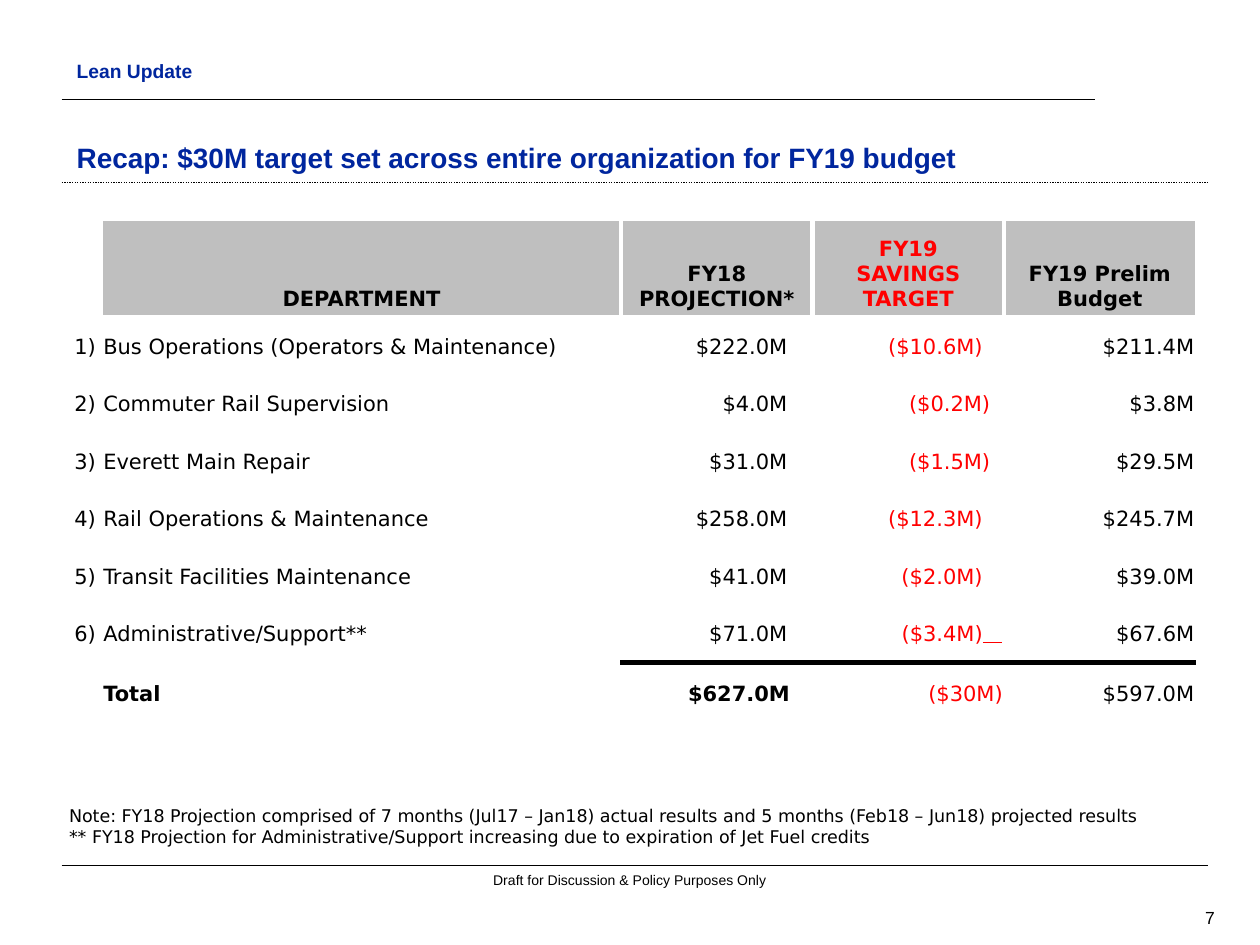
from lxml.etree import SubElement
from pptx import Presentation
from pptx.dml.color import RGBColor
from pptx.enum.dml import MSO_LINE
from pptx.enum.shapes import MSO_CONNECTOR
from pptx.enum.text import MSO_ANCHOR as ANCHOR, PP_ALIGN as ALIGN
from pptx.oxml import parse_xml
from pptx.oxml.ns import nsdecls, qn
from pptx.util import Inches, Pt

BLACK = RGBColor(0x00, 0x00, 0x00)
WHITE = RGBColor(0xFF, 0xFF, 0xFF)
BLUE = RGBColor(0x00, 0x26, 0x9E)
RED = RGBColor(0xFF, 0x00, 0x00)
GRAY = RGBColor(0xBF, 0xBF, 0xBF)

HEADERS = ["", "DEPARTMENT", "FY18 PROJECTION*", "FY19\nSAVINGS TARGET", "FY19 Prelim Budget"]
ROWS = [
    ["1)", "Bus Operations (Operators & Maintenance)", "$222.0M", "($10.6M)", "$211.4M"],
    ["2)", "Commuter Rail Supervision", "$4.0M", "($0.2M)", "$3.8M"],
    ["3)", "Everett Main Repair", "$31.0M", "($1.5M)", "$29.5M"],
    ["4)", "Rail Operations & Maintenance", "$258.0M", "($12.3M)", "$245.7M"],
    ["5)", "Transit Facilities Maintenance", "$41.0M", "($2.0M)", "$39.0M"],
    ["6)", "Administrative/Support**", "$71.0M", "($3.4M)", "$67.6M"],
    ["", "Total", "$627.0M", "($30M)", "$597.0M"],
]
SAVINGS_INSETS = [0.17, 0.11, 0.11, 0.17, 0.17, 0.01, 0.01]
COL_WIDTHS = [0.23, 4.12, 1.52, 1.52, 1.52]
TABLE_HEIGHT, HEADER_HEIGHT, TOTAL_HEIGHT = 4, 0.77, 0.49
FIRST_AMOUNT, SAVINGS = 2, 3
SUPPORT, TOTAL = len(ROWS) - 1, len(ROWS)


class SlideBuilder:
    heading = {"name": "Arial", "bold": True}
    footer = {"name": "Arial", "bold": False}
    body = {"name": "DejaVu Sans", "bold": False}

    def __init__(self, slide):
        self.s = slide

    def lines(self, tf, text, style, size, color=BLACK, align=ALIGN.LEFT):
        for i, line in enumerate(text.split("\n")):
            p = tf.paragraphs[0] if i == 0 else tf.add_paragraph()
            p.alignment = align
            self.run(p, line, style, size, color)

    def run(self, p, text, style, size, color):
        r = p.add_run()
        r.text = text
        for name, value in {**style, "size": Pt(size)}.items():
            setattr(r.font, name, value)
        r.font.color.rgb = color

    def text(self, box, text, style, size, color=BLACK, align=ALIGN.LEFT, anchor=ANCHOR.TOP):
        tf = self.s.shapes.add_textbox(*map(Inches, box)).text_frame
        tf.word_wrap = True
        tf.vertical_anchor = anchor
        self.lines(tf, text, style, size, color, align)

    def rule(self, y, right, width=0.75, dash=None):
        sp = self.s.shapes.add_connector(
            MSO_CONNECTOR.STRAIGHT, Inches(0.49), Inches(y), Inches(right), Inches(y))
        sp.line.color.rgb = BLACK
        sp.line.width = Pt(width)
        if dash:
            sp.line.dash_style = dash
        SubElement(sp._element.spPr, qn("a:effectLst"))

    def borders(self, cell, edges):
        tc_pr = cell._tc.get_or_add_tcPr()
        for i, (side, (color, width)) in enumerate(edges.items()):
            tc_pr.insert(i, parse_xml(
                f'<a:ln{side} {nsdecls("a")} w="{Pt(width)}"><a:solidFill>'
                f'<a:srgbClr val="{color}"/></a:solidFill></a:ln{side}>'))

    def edges(self, row, col):
        def across(edge):
            if edge == TOTAL and col >= FIRST_AMOUNT:
                return BLACK, 3
            return WHITE, 3 if edge == 1 and col else 1

        def down(edge):
            thick = edge > FIRST_AMOUNT or (edge == FIRST_AMOUNT and row == 0)
            return WHITE, 3 if thick and edge < len(COL_WIDTHS) else 1

        return {"L": down(col), "R": down(col + 1), "T": across(row), "B": across(row + 1)}

    def cell(self, cell, row, col, text):
        header = row == 0
        if header and col:
            cell.fill.solid()
            cell.fill.fore_color.rgb = GRAY
        else:
            cell.fill.background()
        side = 0.05 if header and col != FIRST_AMOUNT else 0 if header else 0.01
        right = side
        if not header and col == FIRST_AMOUNT:
            right = 0.18 if row == TOTAL else 0.2
        elif not header and col == SAVINGS:
            right = SAVINGS_INSETS[row - 1]
        layout = {
            "margin_left": Inches(side),
            "margin_right": Inches(right),
            "margin_top": Inches(0.05 if header else 0.01),
            "margin_bottom": Inches(0.05 if header else 0),
            "vertical_anchor": ANCHOR.BOTTOM if header else ANCHOR.MIDDLE,
        }
        for name, value in layout.items():
            setattr(cell, name, value)
        bold = header or (row == TOTAL and col <= FIRST_AMOUNT)
        align = ALIGN.CENTER if header else ALIGN.RIGHT if col >= FIRST_AMOUNT else ALIGN.LEFT
        color = RED if col == SAVINGS else BLACK
        self.lines(cell.text_frame, text, {**self.body, "bold": bold}, 12, color, align)
        if (row, col) == (SUPPORT, SAVINGS):
            underlined = {**self.body, "underline": True}
            self.run(cell.text_frame.paragraphs[0], "   ", underlined, 12, color)
        self.borders(cell, self.edges(row, col))

    def table(self, left, top, rows):
        frame = self.s.shapes.add_table(
            len(rows), len(COL_WIDTHS), Inches(left), Inches(top),
            Inches(sum(COL_WIDTHS)), Inches(TABLE_HEIGHT))
        table = frame.table
        table.horz_banding = False
        row_height = (TABLE_HEIGHT - HEADER_HEIGHT - TOTAL_HEIGHT) / (len(rows) - 2)
        heights = [HEADER_HEIGHT] + [row_height] * (len(rows) - 2) + [TOTAL_HEIGHT]
        for column, width in zip(table.columns, COL_WIDTHS):
            column.width = Inches(width)
        for i, (values, height) in enumerate(zip(rows, heights)):
            table.rows[i].height = Inches(height)
            for j, value in enumerate(values):
                self.cell(table.cell(i, j), i, j, value)


def main():
    prs = Presentation()
    prs.slide_width, prs.slide_height = Inches(10), Inches(7.5)
    b = SlideBuilder(prs.slides.add_slide(prs.slide_layouts[6]))

    b.rule(0.79, 8.69, width=1)
    b.rule(1.45, 9.59, dash=MSO_LINE.ROUND_DOT)
    b.rule(6.87, 9.59)
    b.text((8.91, 7.16, 0.83, 0.25), "7", b.footer, 10, align=ALIGN.RIGHT, anchor=ANCHOR.MIDDLE)
    b.text((3.57, 6.87, 2.86, 0.24), "Draft for Discussion & Policy Purposes Only",
           b.footer, 8, align=ALIGN.CENTER)
    b.text((0.51, 0.92, 8.48, 0.51),
           "Recap: $30M target set across entire organization for FY19 budget",
           b.heading, 16, BLUE, anchor=ANCHOR.BOTTOM)
    b.text((0.51, 0.42, 3.41, 0.25), "Lean Update", b.heading, 11, BLUE)
    b.text((0.45, 6, 9.13, 0.77),
           "Note: FY18 Projection comprised of 7 months (Jul17 – Jan18) actual results "
           "and 5 months (Feb18 – Jun18) projected results\n"
           "** FY18 Projection for Administrative/Support increasing due to expiration "
           "of Jet Fuel credits", b.body, 10, anchor=ANCHOR.BOTTOM)
    b.table(0.58, 1.75, [HEADERS] + ROWS)

    prs.save("out.pptx")


if __name__ == "__main__":
    main()
